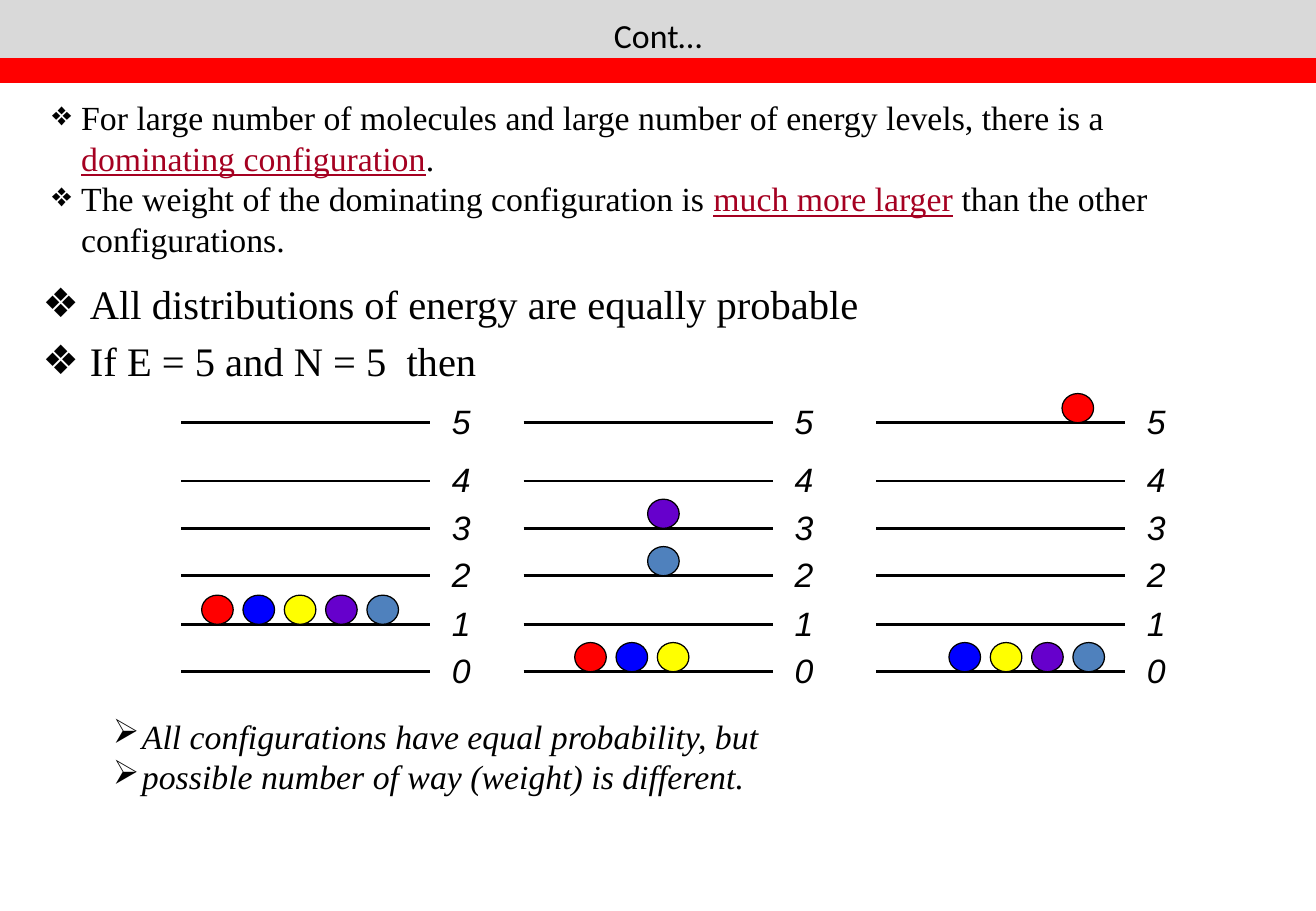
from lxml.etree import SubElement
from pptx import Presentation
from pptx.dml.color import RGBColor
from pptx.enum.shapes import MSO_CONNECTOR, MSO_SHAPE
from pptx.enum.text import MSO_ANCHOR, MSO_AUTO_SIZE, PP_ALIGN
from pptx.oxml.ns import qn
from pptx.util import Inches, Pt

BLACK = RGBColor(0, 0, 0)
GREY = RGBColor(0xD9, 0xD9, 0xD9)
RED = RGBColor(0xFF, 0, 0)
BLUE = RGBColor(0, 0, 0xFF)
YELLOW = RGBColor(0xFF, 0xFF, 0)
PURPLE = RGBColor(0x66, 0, 0xCC)
STEEL = RGBColor(0x4F, 0x81, 0xBD)
CRIMSON = RGBColor(0xA5, 0, 0x21)

WIDE, HIGH = 10.83, 7.5
HEAD = 0.58
SERIF = "Times New Roman"

deck = Presentation()
deck.slide_width, deck.slide_height = Inches(WIDE), Inches(HIGH)
slide = deck.slides.add_slide(deck.slide_layouts[1])
shapes = slide.shapes


def fill_list(frame, items, mark, size, indent, italic=False):
    frame.word_wrap = True
    for row, parts in enumerate(items):
        para = frame.add_paragraph() if row else frame.paragraphs[0]
        props = para._p.get_or_add_pPr()
        props.set("marL", str(Inches(indent)))
        props.set("indent", str(Inches(-indent)))
        SubElement(props, qn("a:buChar")).set("char", mark)
        font = para.font
        font.name, font.size, font.italic = SERIF, Pt(size), italic
        font.color.rgb = BLACK
        for turn, words in enumerate(parts):
            run = para.add_run()
            run.text = words
            if turn % 2:
                run.font.color.rgb = CRIMSON
                run.font.underline = True


def add_line(left, right, y, color, width):
    line = shapes.add_connector(
        MSO_CONNECTOR.STRAIGHT, Inches(left), Inches(y), Inches(right), Inches(y))
    line.line.color.rgb = color
    line.line.width = Pt(width)
    SubElement(line._element.spPr, qn("a:effectLst"))


title = shapes.title
title.left, title.top, title.width, title.height = 0, 0, Inches(WIDE), Inches(HEAD)
title.fill.solid()
title.fill.fore_color.rgb = GREY
title.text_frame.vertical_anchor = MSO_ANCHOR.MIDDLE
title.text_frame.text = "Cont…"
para = title.text_frame.paragraphs[0]
para.alignment = PP_ALIGN.CENTER
para.font.name, para.font.size = "Calibri", Pt(20)
para.font.color.rgb = BLACK

body = slide.placeholders[1]
body.left, body.top = Inches(0.25), Inches(2.25)
body.width, body.height = Inches(10.25), Inches(4.45)
fill_list(body.text_frame, [
    ["All distributions of energy are equally probable"],
    ["If E = 5 and N = 5  then"],
], "❖", 24, 0.39)

LEVELS = [5.53, 5.14, 4.74, 4.35, 3.96, 3.48]
SPAN, STEP = 2.05, 0.34
BALL_W, BALL_H = 0.26, 0.24
CHARTS = [
    (1.49, [(1, 0.17, [RED, BLUE, YELLOW, PURPLE, STEEL])]),
    (4.31, [(0, 0.42, [RED, BLUE, YELLOW]), (3, 1.02, [PURPLE]), (2, 1.02, [STEEL])]),
    (7.21, [(5, 1.53, [RED]), (0, 0.6, [BLUE, YELLOW, PURPLE, STEEL])]),
]

for left, groups in CHARTS:
    for level, y in enumerate(LEVELS):
        add_line(left, left + SPAN, y, BLACK, 1.5)
        label = shapes.add_textbox(
            Inches(left + SPAN + 0.08), Inches(y - 0.23), Inches(0.45), Inches(0.43))
        label.text_frame.word_wrap = True
        label.text_frame.auto_size = MSO_AUTO_SIZE.SHAPE_TO_FIT_TEXT
        label.text_frame.text = str(level)
        font = label.text_frame.paragraphs[0].font
        font.name, font.size, font.italic = "Arial", Pt(20), True
        font.color.rgb = BLACK
    for level, start, colors in groups:
        for col, color in enumerate(colors):
            ball = shapes.add_shape(
                MSO_SHAPE.FLOWCHART_CONNECTOR,
                Inches(left + start + col * STEP), Inches(LEVELS[level] - BALL_H),
                Inches(BALL_W), Inches(BALL_H))
            ball.shadow.inherit = False
            ball.fill.solid()
            ball.fill.fore_color.rgb = color
            ball.line.color.rgb = BLACK
            ball.line.width = Pt(0.75)

NOTES = [
    (0.83, 5.84, 8.83, 0.77, "➢", True, [
        ["All configurations have equal probability, but"],
        ["possible number of way (weight) is different."],
    ]),
    (0.33, 0.75, 10.17, 1.45, "❖", False, [
        ["For large number of molecules and large number of energy levels, there is a ",
         "dominating configuration", "."],
        ["The weight of the dominating configuration is ",
         "much more larger", " than the other configurations."],
    ]),
]
for left, top, width, height, mark, italic, items in NOTES:
    box = shapes.add_textbox(Inches(left), Inches(top), Inches(width), Inches(height))
    box.text_frame.auto_size = MSO_AUTO_SIZE.SHAPE_TO_FIT_TEXT
    fill_list(box.text_frame, items, mark, 20, 0.24, italic)

add_line(0, WIDE, HEAD, RED, 15)

deck.save("out.pptx")
